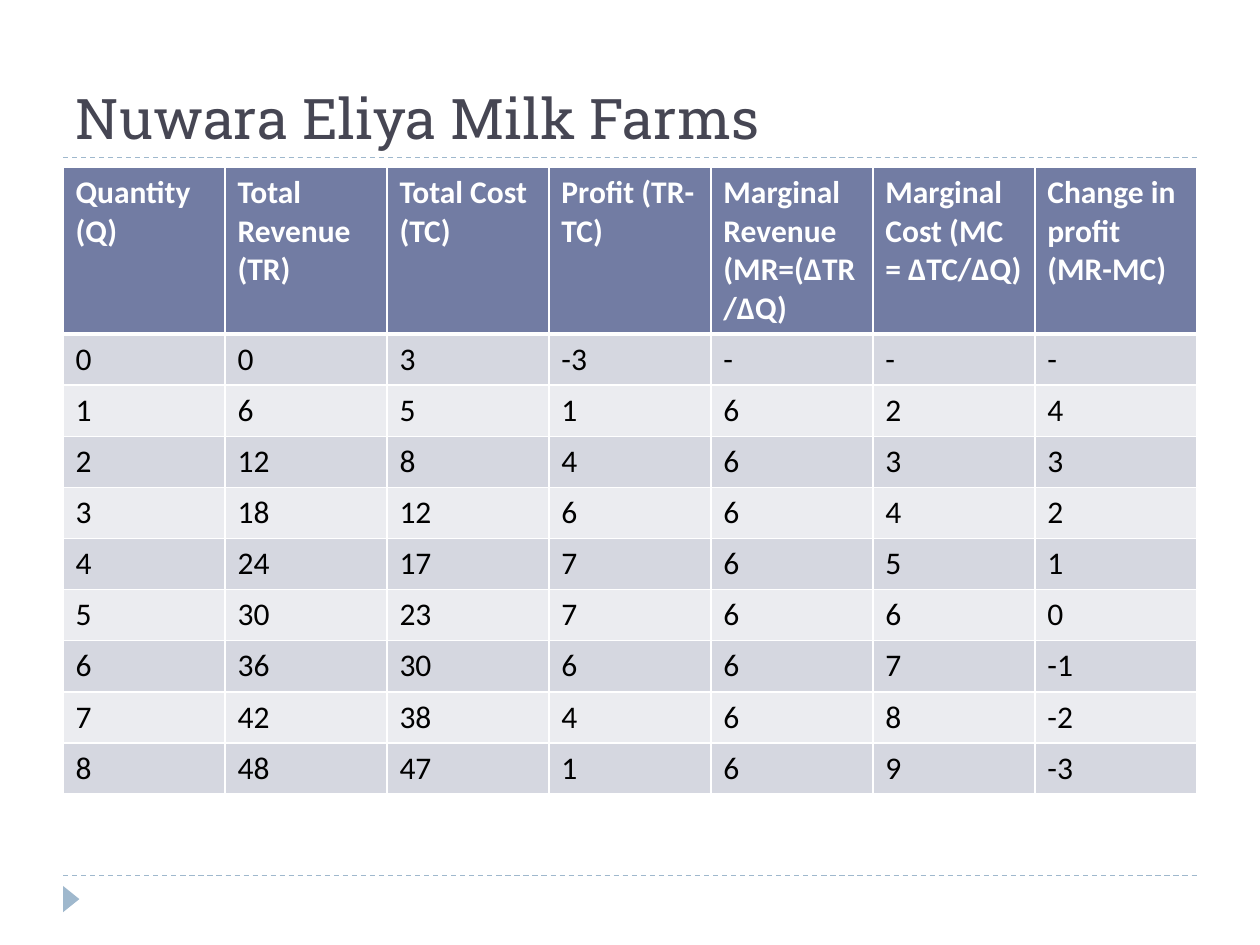
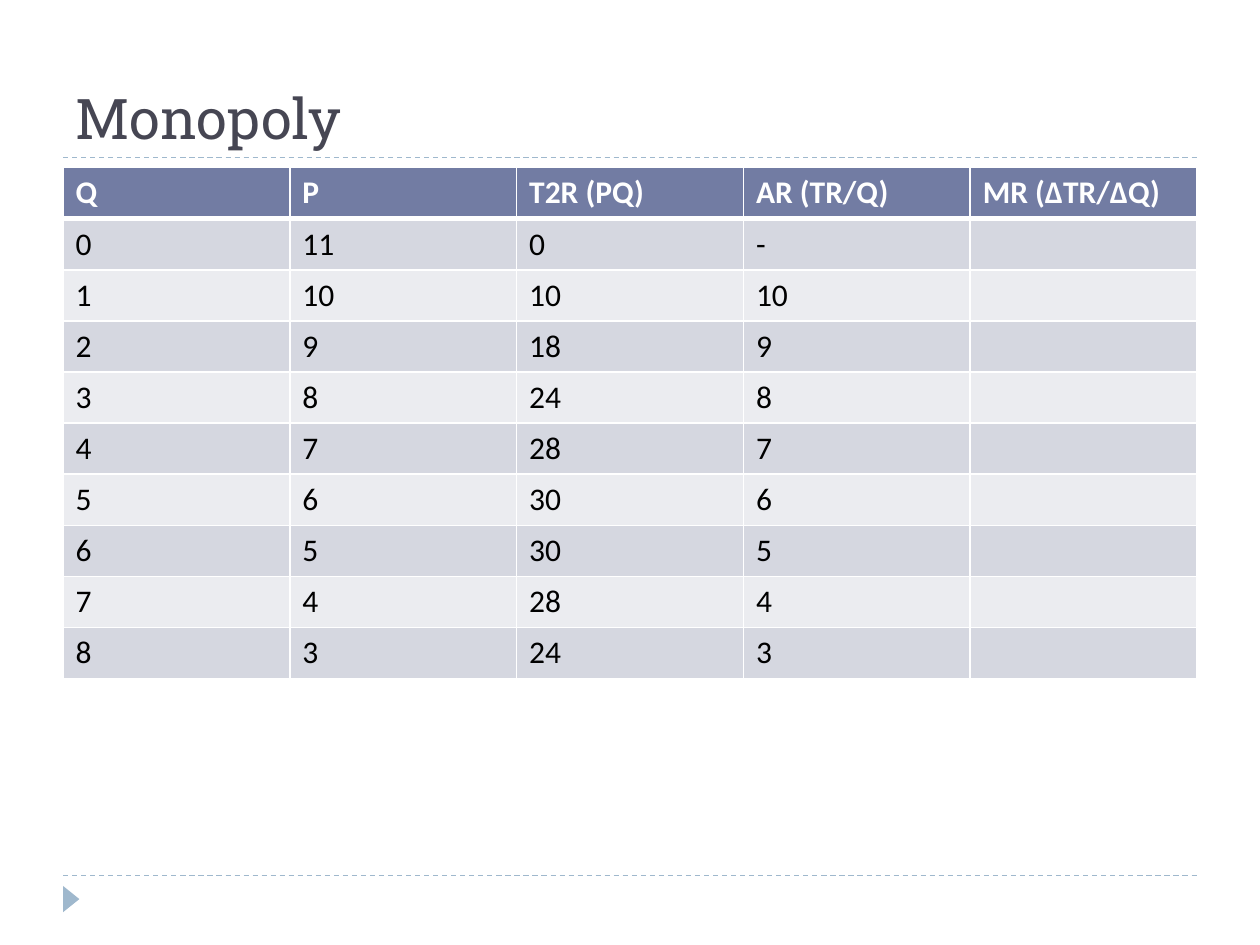
"""Build two slides of revenue, cost and profit tables."""
from dataclasses import dataclass

import pptx
import pptx.dml.color
import pptx.enum.dml
import pptx.enum.shapes
import pptx.enum.text
import pptx.oxml
import pptx.oxml.ns
import pptx.util

Cm = pptx.util.Cm
Pt = pptx.util.Pt
RGB = pptx.dml.color.RGBColor.from_string


@dataclass(frozen=True)
class Theme:
    """Colours, type and shared measures in centimetres."""
    title_color: str = "464653"
    accent: str = "9FB8CD"
    header_fill: str = "727CA3"
    band_fills: tuple = ("D5D7E0", "EBECF0")
    header_text: str = "FFFFFF"
    body_text: str = "000000"
    grid: str = "FFFFFF"
    title_font: str = "Roboto Slab"
    body_font: str = "Calibri"
    title_size: int = 32
    body_size: int = 18
    left: float = 1.27
    width: float = 22.86
    title_rule: float = 3.18
    footer_rule: float = 17.65
    table_top: float = 3.38
    row_height: float = 1.03


THEME = Theme()

FARM_HEADER = (
    "Quantity (Q)", "Total Revenue (TR)", "Total Cost (TC)", "Profit (TR-TC)",
    "Marginal Revenue (MR=(∆TR/∆Q)", "Marginal Cost (MC = ∆TC/∆Q)",
    "Change in profit\n(MR-MC)",
)
FARM_ROWS = (
    (0, 0, 3, -3, "-", "-", "-"),
    (1, 6, 5, 1, 6, 2, 4),
    (2, 12, 8, 4, 6, 3, 3),
    (3, 18, 12, 6, 6, 4, 2),
    (4, 24, 17, 7, 6, 5, 1),
    (5, 30, 23, 7, 6, 6, 0),
    (6, 36, 30, 6, 6, 7, -1),
    (7, 42, 38, 4, 6, 8, -2),
    (8, 48, 47, 1, 6, 9, -3),
)
MONOPOLY_HEADER = ("Q", "P", "T2R (PQ)", "AR (TR/Q)", "MR (∆TR/∆Q)")
MONOPOLY_ROWS = (
    (0, 11, 0, "-", ""),
    (1, 10, 10, 10, ""),
    (2, 9, 18, 9, ""),
    (3, 8, 24, 8, ""),
    (4, 7, 28, 7, ""),
    (5, 6, 30, 6, ""),
    (6, 5, 30, 5, ""),
    (7, 4, 28, 4, ""),
    (8, 3, 24, 3, ""),
)


def apply_format(target, values):
    """Set every attribute named in values on target."""
    for attribute, value in values.items():
        setattr(target, attribute, value)


def format_text(frame, color, font_values):
    """Give all runs of a text frame one colour and font."""
    for paragraph in frame.paragraphs:
        for run in paragraph.runs:
            apply_format(run.font, font_values)
            run.font.color.rgb = RGB(color)


def add_title(slide, wording):
    """Place and format the title placeholder."""
    title = slide.shapes.title
    apply_format(title, {
        "left": Cm(THEME.left), "top": Cm(0.43),
        "width": Cm(THEME.width), "height": Cm(2.74),
    })
    frame = title.text_frame
    frame.text = wording
    apply_format(frame, {
        "vertical_anchor": pptx.enum.text.MSO_ANCHOR.BOTTOM,
        "auto_size": pptx.enum.text.MSO_AUTO_SIZE.NONE,
        "word_wrap": True,
    })
    frame.paragraphs[0].alignment = pptx.enum.text.PP_ALIGN.LEFT
    format_text(frame, THEME.title_color,
                {"name": THEME.title_font, "size": Pt(THEME.title_size)})


def add_rule(slide, height):
    """Draw a dashed rule across the content width."""
    rule = slide.shapes.add_connector(
        pptx.enum.shapes.MSO_CONNECTOR.STRAIGHT,
        Cm(THEME.left), Cm(height), Cm(THEME.left + THEME.width), Cm(height))
    rule.line.color.rgb = RGB(THEME.accent)
    apply_format(rule.line, {
        "width": Pt(0.75), "dash_style": pptx.enum.dml.MSO_LINE.DASH})
    properties = rule.element.find(pptx.oxml.ns.qn("p:spPr"))
    properties.append(pptx.oxml.parse_xml(
        f'<a:effectLst {pptx.oxml.ns.nsdecls("a")}/>'))


def add_footer_marker(slide):
    """Draw the triangle that points right below the footer rule."""
    marker = slide.shapes.add_shape(
        pptx.enum.shapes.MSO_SHAPE.ISOSCELES_TRIANGLE,
        Cm(1.17), Cm(17.96), Cm(0.53), Cm(0.33))
    marker.rotation = 90
    marker.shadow.inherit = False
    marker.fill.solid()
    marker.fill.fore_color.rgb = RGB(THEME.accent)
    marker.line.fill.background()


def add_borders(cell, widths):
    """Add solid cell borders from a dict of edge and point width."""
    for edge, width in widths.items():
        cell._tc.get_or_add_tcPr().append(pptx.oxml.parse_xml(
            f'<a:ln{edge} {pptx.oxml.ns.nsdecls("a")} w="{Pt(width)}">'
            f'<a:solidFill><a:srgbClr val="{THEME.grid}"/></a:solidFill>'
            f'</a:ln{edge}>'))


def fill_row(cells, values, fill, color, bold, borders):
    """Write and format the cells of one table row."""
    for cell, value in zip(cells, values):
        cell.text = str(value)
        format_text(cell.text_frame, color, {
            "name": THEME.body_font, "size": Pt(THEME.body_size),
            "bold": bold})
        add_borders(cell, borders)
        cell.fill.solid()
        cell.fill.fore_color.rgb = RGB(fill)


def add_schedule(slide, header, rows, header_height):
    """Add a banded table with equal columns."""
    height = header_height + THEME.row_height * len(rows)
    schedule = slide.shapes.add_table(
        len(rows) + 1, len(header), Cm(THEME.left), Cm(THEME.table_top),
        Cm(THEME.width), Cm(height)).table
    for column in schedule.columns:
        column.width = Cm(THEME.width / len(header))
    header_row, *body_rows = schedule.rows
    header_row.height = Cm(header_height)
    fill_row(header_row.cells, header, THEME.header_fill, THEME.header_text,
             True, {"L": 1, "R": 1, "T": 1, "B": 3})
    for index, (body_row, values) in enumerate(zip(body_rows, rows)):
        body_row.height = Cm(THEME.row_height)
        fill_row(body_row.cells, values, THEME.band_fills[index % 2],
                 THEME.body_text, False, {"L": 1, "R": 1, "B": 1})


def add_schedule_slide(deck, title, header, rows, header_height):
    """Add a slide with title, rules, footer marker and table."""
    slide = deck.slides.add_slide(deck.slide_layouts.get_by_name("Title Only"))
    for height in (THEME.footer_rule, THEME.title_rule):
        add_rule(slide, height)
    add_footer_marker(slide)
    add_title(slide, title)
    add_schedule(slide, header, rows, header_height)


def main():
    """Build and save the deck."""
    deck = pptx.Presentation()
    apply_format(deck, {"slide_width": Cm(25.4), "slide_height": Cm(19.05)})
    add_schedule_slide(deck, "Nuwara Eliya Milk Farms",
                       FARM_HEADER, FARM_ROWS, 3.3)
    add_schedule_slide(deck, "Monopoly",
                       MONOPOLY_HEADER, MONOPOLY_ROWS, THEME.row_height)
    deck.save("out.pptx")


if __name__ == "__main__":
    main()
